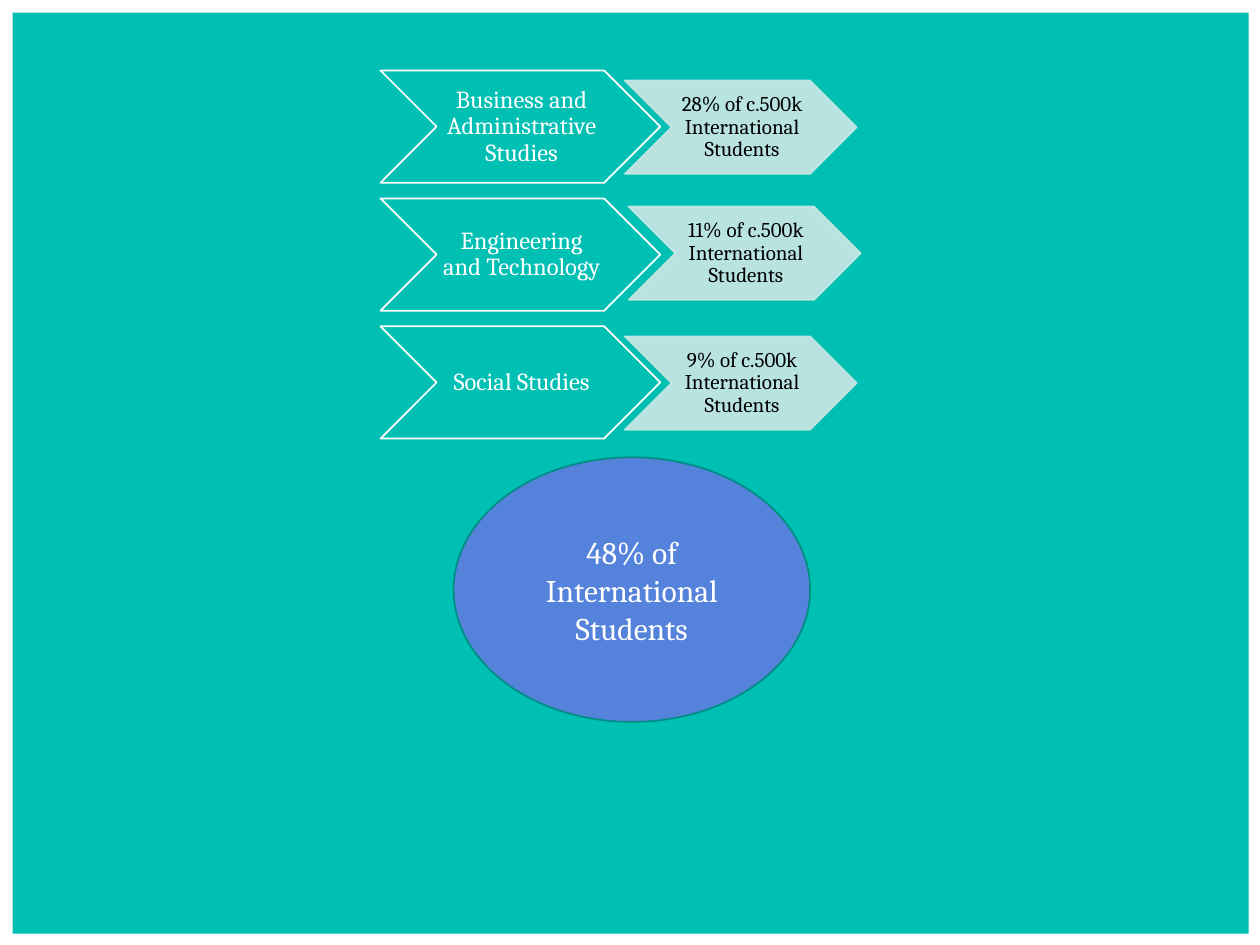
from lxml import etree
from pptx import Presentation
from pptx.dml.color import RGBColor
from pptx.enum import shapes, text
from pptx.oxml.ns import qn
from pptx.util import Inches, Pt

TEAL, MINT, WHITE, BLACK = "00BFB3", "CCE8E5", "FFFFFF", "000000"
ROWS = [
    # subject, share, left and top of the share chevron
    ("Business and Administrative Studies", "28%", 4.96, 0.64),
    ("Engineering and Technology", "11%", 4.99, 1.64),
    ("Social Studies", "9%", 4.96, 2.67),
]


def rgb(value):
    return RGBColor.from_string(value)


def add_shape(s, kind, box, fill, line=None):
    sp = s.shapes.add_shape(kind, *map(Inches, box))
    sp.shadow.inherit = False
    sp.fill.solid()
    sp.fill.fore_color.rgb = rgb(fill)
    if line:
        sp.line.color.rgb = rgb(line)
        sp.line.width = Pt(1)
    else:
        sp.line.fill.background()
    return sp


def set_text(sp, words, size, color):
    tf = sp.text_frame
    tf.word_wrap = True
    tf.vertical_anchor = text.MSO_ANCHOR.MIDDLE
    p = tf.paragraphs[0]
    p.alignment = text.PP_ALIGN.CENTER
    r = p.add_run()
    r.text = words
    r.font.name = "Cambria"
    r.font.size = Pt(size)
    r.font.color.rgb = rgb(color)


def set_opacity(sp, percent):
    """Apply the opacity to both the fill and the line."""
    for color in sp._element.spPr.iter(qn("a:srgbClr")):
        etree.SubElement(color, qn("a:alpha"), val=str(percent * 1000))


def add_chevron(s, box, fill, line, words, size, color):
    sp = add_shape(s, shapes.MSO_SHAPE.CHEVRON, box, fill, line)
    set_text(sp, words, size, color)
    tf = sp.text_frame
    tf.margin_left, tf.margin_right = Inches(0.02), 0
    tf.margin_top = tf.margin_bottom = Inches(0.01)
    tf.paragraphs[0].line_spacing = 0.9
    return sp


def main():
    prs = Presentation()
    prs.slide_width, prs.slide_height = Inches(10), Inches(7.5)
    s = prs.slides.add_slide(prs.slide_layouts[6])

    add_shape(s, shapes.MSO_SHAPE.RECTANGLE, (0.1, 0.1, 9.81, 7.31), TEAL)
    for i, (subject, share, left, top) in enumerate(ROWS):
        add_chevron(s, (3.02, 0.56 + i * 1.015, 2.22, 0.89), TEAL, WHITE,
                    subject, 14, WHITE)
        sp = add_chevron(s, (left, top, 1.84, 0.74), MINT, MINT,
                         f"{share} of c.500k International Students", 12, BLACK)
        set_opacity(sp, 90)

    total = add_shape(s, shapes.MSO_SHAPE.OVAL, (3.6, 3.63, 2.83, 2.1),
                      "5583DB", "008D84")
    set_text(total, "48% of International Students", 18, WHITE)

    prs.save("out.pptx")


if __name__ == "__main__":
    main()
